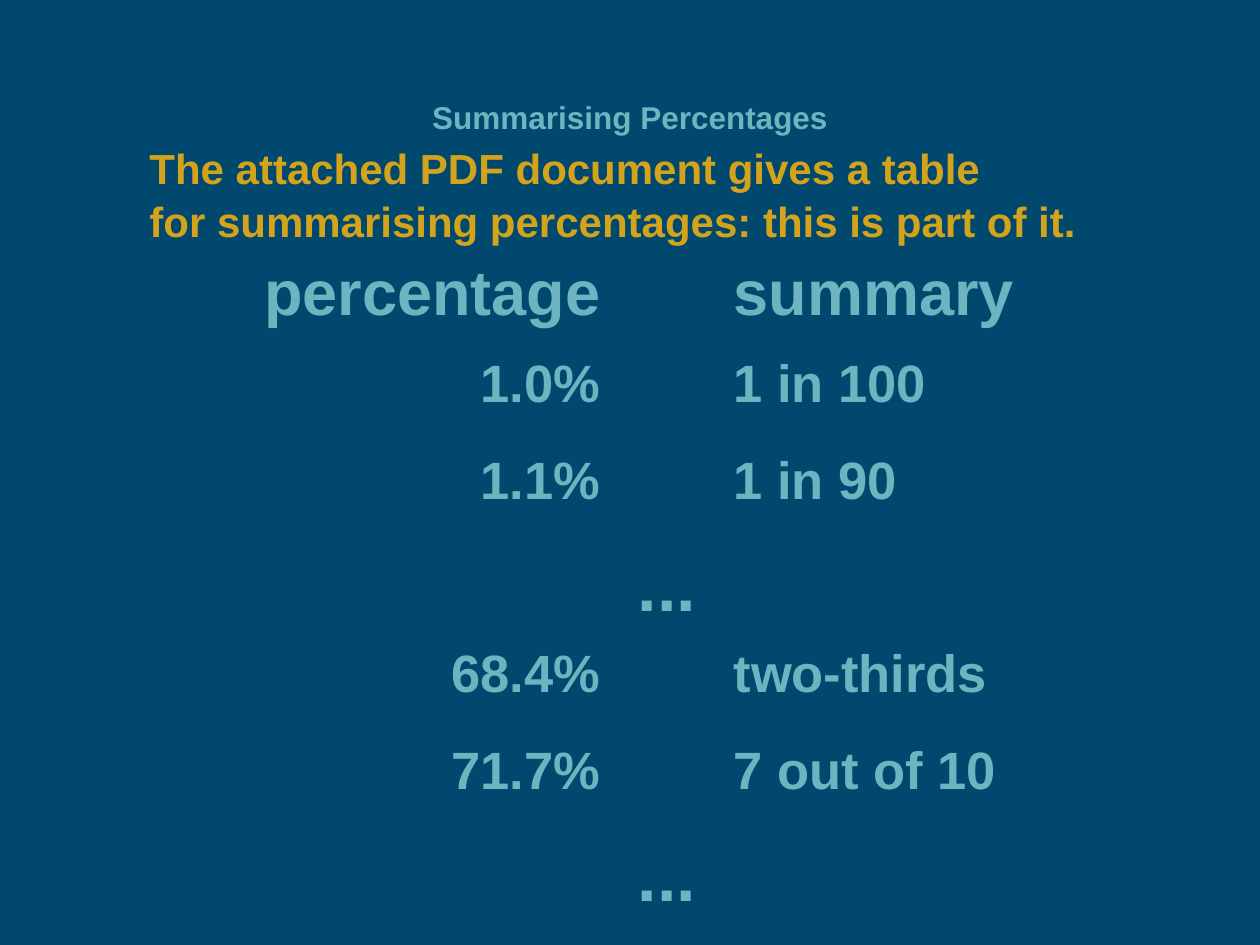
from pptx import Presentation
from pptx.dml.color import RGBColor
from pptx.enum.text import MSO_ANCHOR, MSO_AUTO_SIZE, PP_ALIGN
from pptx.util import Emu, Pt

LEFT, CENTER, RIGHT = PP_ALIGN.LEFT, PP_ALIGN.CENTER, PP_ALIGN.RIGHT
MIDDLE, NO_FIT = MSO_ANCHOR.MIDDLE, MSO_AUTO_SIZE.NONE

# Content
TITLE = "Summarising Percentages"
INTRO = ["The attached PDF document gives a table",
         "for summarising percentages: this is part of it."]
ROWS = [
    ("percentage", "", "summary"),
    ("1.0%", "", "1 in 100"),
    ("1.1%", "", "1 in 90"),
    ("", "...", ""),
    ("68.4%", "", "two-thirds"),
    ("71.7%", "", "7 out of 10"),
    ("", "...", ""),
]

# Look, with lengths in px
NAVY, TEAL, GOLD = "00486D", "6DB4C0", "D3A41B"
FONT = "Arial"
HEADER_SIZE, BODY_SIZE, DOTS_SIZE = 36, 30, 40
COLUMNS = [(398, RIGHT), (108, CENTER), (440, LEFT)]
TABLE_LEFT, TABLE_TOP, TABLE_HEIGHT = 215, 252, 677
NO_GRID_STYLE = "{2D5ABB26-0587-4C30-8999-92F81FD0307C}"


def px(n):
    return Emu(round(n * 914400 / 126))


def rgb(value):
    return RGBColor.from_string(value)


def add_run(p, text, size, color):
    r = p.add_run()
    r.text = text
    r.font.name = FONT
    r.font.size = Pt(size)
    r.font.bold = True
    r.font.color.rgb = rgb(color)


prs = Presentation()
prs.slide_width, prs.slide_height = px(1260), px(945)
s = prs.slides.add_slide(prs.slide_layouts[5])
s.background.fill.solid()
s.background.fill.fore_color.rgb = rgb(NAVY)

# Title
title = s.shapes.title
title.left, title.top, title.width, title.height = map(px, (63, 38, 1134, 157))
tf = title.text_frame
tf.auto_size = NO_FIT
tf.vertical_anchor = MIDDLE
p = tf.paragraphs[0]
p.alignment = CENTER
add_run(p, TITLE, 18, TEAL)

# Introduction
tf = s.shapes.add_textbox(*map(px, (137, 133, 1029, 115))).text_frame
tf.word_wrap = True
p = tf.paragraphs[0]
p.line_spacing = 1.06
for i, line in enumerate(INTRO):
    if i:
        p.add_line_break()
    add_run(p, line, 24, GOLD)

# Table of percentages
table_width = sum(width for width, _ in COLUMNS)
frame = s.shapes.add_table(len(ROWS), len(COLUMNS), px(TABLE_LEFT), px(TABLE_TOP),
                           px(table_width), px(TABLE_HEIGHT))
table = frame.table
table.first_row = table.horz_banding = False
table._tbl.tblPr.find("{*}tableStyleId").text = NO_GRID_STYLE
for column, (width, _) in zip(table.columns, COLUMNS):
    column.width = px(width)
for i, row in enumerate(ROWS):
    table.rows[i].height = px(TABLE_HEIGHT / len(ROWS))
    for j, (text, (_, align)) in enumerate(zip(row, COLUMNS)):
        cell = table.cell(i, j)
        cell.fill.background()
        if text:
            p = cell.text_frame.paragraphs[0]
            p.alignment = align
            size = DOTS_SIZE if text == "..." else BODY_SIZE if i else HEADER_SIZE
            add_run(p, text, size, TEAL)

prs.save("out.pptx")
